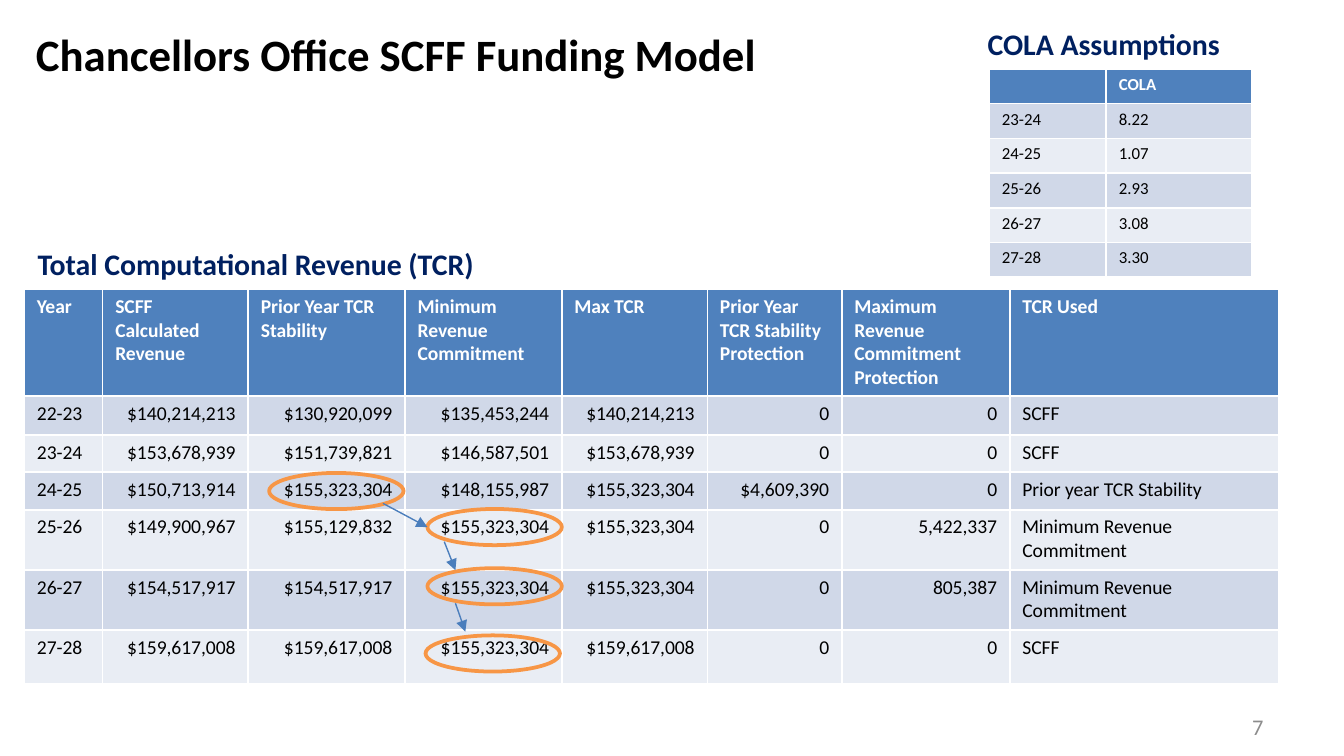
"""Build the SCFF funding model slide with its revenue and COLA tables."""
from dataclasses import dataclass
from typing import NamedTuple

from lxml.etree import SubElement
from pptx import Presentation
from pptx.dml.color import RGBColor
from pptx.enum.shapes import MSO_CONNECTOR, MSO_SHAPE
from pptx.enum.text import MSO_ANCHOR, MSO_AUTO_SIZE, PP_ALIGN
from pptx.oxml.ns import qn
from pptx.slide import Slide
from pptx.text.text import _Paragraph
from pptx.util import Pt


@dataclass(frozen=True)
class Theme:
    font: str = "Calibri"
    black: str = "000000"
    white: str = "FFFFFF"
    navy: str = "002060"
    gray: str = "8C8C8C"
    header: str = "4F81BD"
    bands: tuple[str, str] = ("D0D8E8", "E9EDF4")
    ring: str = "F79646"
    arrow: str = "4B7EBC"
    title: float = 24
    heading: float = 16
    number: float = 12
    revenue: float = 10.5
    cola: float = 9


class Label(NamedTuple):
    text: str
    left: float
    top: float
    width: float
    height: float
    size: float
    color: str
    bold: bool = True
    align: PP_ALIGN = PP_ALIGN.LEFT
    anchor: MSO_ANCHOR = MSO_ANCHOR.TOP
    fit: MSO_AUTO_SIZE = MSO_AUTO_SIZE.SHAPE_TO_FIT_TEXT


class Grid(NamedTuple):
    left: float
    top: float
    widths: list[float]
    heights: list[float]
    rows: list[list[str]]
    size: float
    right_columns: range


class Ring(NamedTuple):
    left: float
    top: float


class Arrow(NamedTuple):
    start_x: float
    start_y: float
    end_x: float
    end_y: float


THEME = Theme()
RING_SIZE = (Pt(72), Pt(19.4))
CELL_FORMAT = {"margin_left": Pt(6.8), "margin_right": Pt(6.8),
               "margin_top": Pt(3), "margin_bottom": Pt(3)}

LABELS = [
    Label("7", 516.2, 378.7, 167.8, 21.6, THEME.number, THEME.gray, False,
          PP_ALIGN.RIGHT, MSO_ANCHOR.MIDDLE, MSO_AUTO_SIZE.NONE),
    Label("Chancellors Office SCFF Funding Model", 12.2, 10.8, 552.2, 36,
          THEME.title, THEME.black),
    Label("COLA Assumptions", 522, 10.1, 216, 26.6, THEME.heading, THEME.navy),
    Label("Total Computational Revenue (TCR)", 13, 128.2, 450, 26.6,
          THEME.heading, THEME.navy),
]

COLA = Grid(530, 36.9, [62.6, 77.8], [18.6] * 6, [
    ["", "COLA"],
    ["23-24", "8.22"],
    ["24-25", "1.07"],
    ["25-26", "2.93"],
    ["26-27", "3.08"],
    ["27-28", "3.30"],
], THEME.cola, range(0))

REVENUE = Grid(13, 155, [42, 78, 84, 84, 78, 72, 90, 144],
               [57.3, 20.9, 19.8, 20.2, 32.2, 32.2, 29], [
    ["Year", "SCFF Calculated Revenue", "Prior Year TCR Stability",
     "Minimum Revenue Commitment", "Max TCR", "Prior Year TCR Stability Protection",
     "Maximum Revenue Commitment Protection", "TCR Used"],
    ["22-23", "$140,214,213", "$130,920,099", "$135,453,244", "$140,214,213",
     "0", "0", "SCFF"],
    ["23-24", "$153,678,939", "$151,739,821", "$146,587,501", "$153,678,939",
     "0", "0", "SCFF"],
    ["24-25", "$150,713,914", "$155,323,304", "$148,155,987", "$155,323,304",
     "$4,609,390", "0", "Prior year TCR Stability"],
    ["25-26", "$149,900,967", "$155,129,832", "$155,323,304", "$155,323,304",
     "0", "5,422,337", "Minimum Revenue Commitment"],
    ["26-27", "$154,517,917", "$154,517,917", "$155,323,304", "$155,323,304",
     "0", "805,387", "Minimum Revenue Commitment"],
    ["27-28", "$159,617,008", "$159,617,008", "$155,323,304", "$159,617,008",
     "0", "0", "SCFF"],
], THEME.revenue, range(1, 7))

RINGS = [Ring(144.2, 253.4), Ring(229, 272.7), Ring(229, 304.4), Ring(228, 340.4)]
ARROWS = [Arrow(205.2, 269.7, 229, 282.4), Arrow(238, 290.2, 244, 305.5),
          Arrow(244, 323.2, 249.3, 338.4)]


def write(paragraph: _Paragraph, text: str, size: float, color: str, bold: bool) -> None:
    """Put one formatted run into a paragraph, or size it when empty."""
    if not text:
        paragraph._p.get_or_add_endParaRPr().set("sz", str(int(size * 100)))
        return
    run = paragraph.add_run()
    run.text = text
    for attribute, value in {"name": THEME.font, "size": Pt(size), "bold": bold}.items():
        setattr(run.font, attribute, value)
    run.font.color.rgb = RGBColor.from_string(color)


def add_label(slide: Slide, label: Label) -> None:
    """Add a text box."""
    frame = slide.shapes.add_textbox(
        Pt(label.left), Pt(label.top), Pt(label.width), Pt(label.height)).text_frame
    frame_format = {"word_wrap": True, "auto_size": label.fit,
                    "vertical_anchor": label.anchor}
    for attribute, value in frame_format.items():
        setattr(frame, attribute, value)
    paragraph = frame.paragraphs[0]
    paragraph.alignment = label.align
    write(paragraph, label.text, label.size, label.color, label.bold)


def add_grid(slide: Slide, grid: Grid) -> None:
    """Add a table with a header row and banded body rows."""
    table = slide.shapes.add_table(
        len(grid.rows), len(grid.widths), Pt(grid.left), Pt(grid.top),
        Pt(sum(grid.widths)), Pt(sum(grid.heights))).table
    for column, width in zip(table.columns, grid.widths):
        column.width = Pt(width)
    for r, (values, height) in enumerate(zip(grid.rows, grid.heights)):
        table.rows[r].height = Pt(height)
        is_header = r == 0
        fill = THEME.header if is_header else THEME.bands[(r - 1) % 2]
        color = THEME.white if is_header else THEME.black
        for c, value in enumerate(values):
            cell = table.cell(r, c)
            for attribute, setting in CELL_FORMAT.items():
                setattr(cell, attribute, setting)
            cell.fill.solid()
            cell.fill.fore_color.rgb = RGBColor.from_string(fill)
            paragraph = cell.text_frame.paragraphs[0]
            if not is_header and c in grid.right_columns:
                paragraph.alignment = PP_ALIGN.RIGHT
            write(paragraph, value, grid.size, color, is_header)


def add_ring(slide: Slide, ring: Ring) -> None:
    """Circle one table value."""
    oval = slide.shapes.add_shape(MSO_SHAPE.OVAL, Pt(ring.left), Pt(ring.top), *RING_SIZE)
    oval.shadow.inherit = False
    oval.fill.background()
    oval.line.color.rgb = RGBColor.from_string(THEME.ring)
    oval.line.width = Pt(2)


def add_arrow(slide: Slide, arrow: Arrow) -> None:
    """Draw an arrow between two circled values."""
    link = slide.shapes.add_connector(MSO_CONNECTOR.STRAIGHT, *map(Pt, arrow))
    link.line.color.rgb = RGBColor.from_string(THEME.arrow)
    link.line.width = Pt(0.75)
    SubElement(link.line._get_or_add_ln(), qn("a:tailEnd"), type="triangle")
    SubElement(link._element.spPr, qn("a:effectLst"))


def main() -> None:
    """Build and save the slide."""
    deck = Presentation()
    deck.slide_width, deck.slide_height = Pt(720), Pt(405)
    slide = deck.slides.add_slide(deck.slide_layouts[6])
    for draw, items in ((add_label, LABELS), (add_grid, [COLA, REVENUE]),
                        (add_ring, RINGS), (add_arrow, ARROWS)):
        for item in items:
            draw(slide, item)
    deck.save("out.pptx")


if __name__ == "__main__":
    main()
